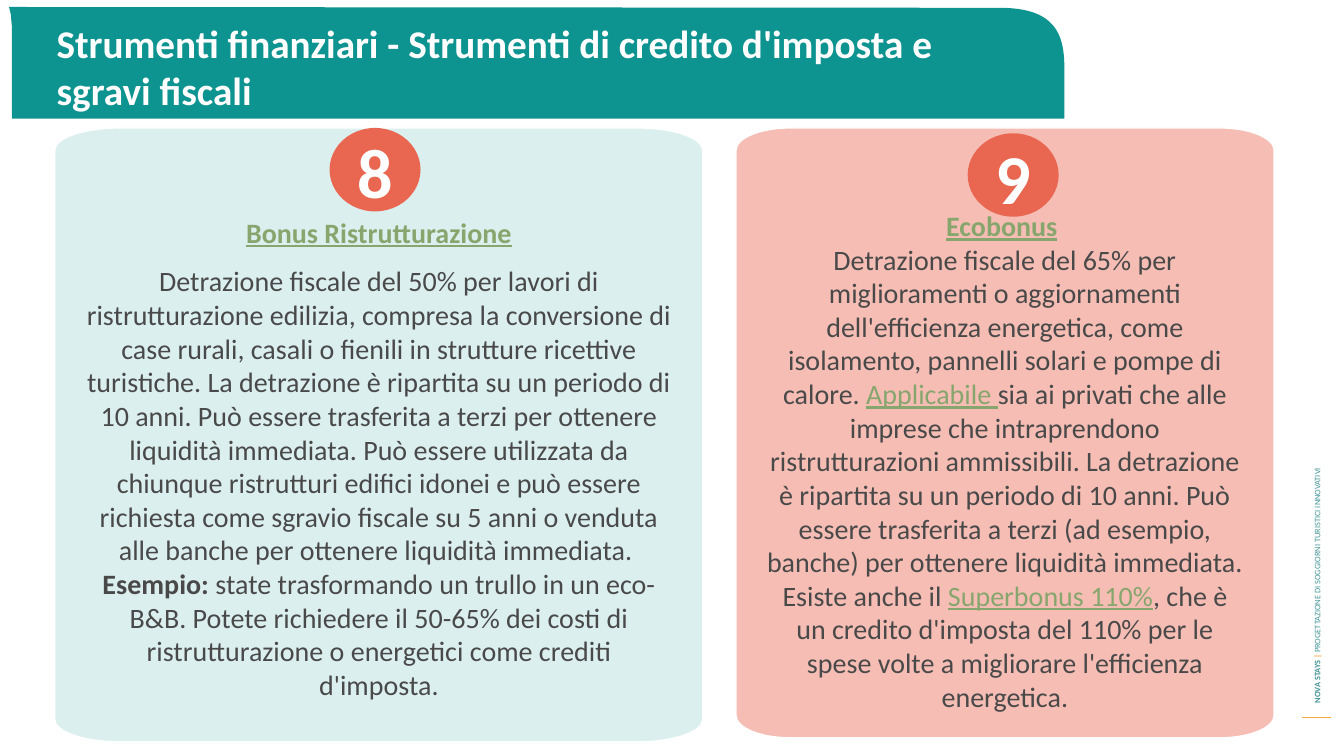
from dataclasses import dataclass

from lxml import etree
from pptx import Presentation
from pptx.dml.color import RGBColor
from pptx.enum.shapes import MSO_CONNECTOR, MSO_SHAPE
from pptx.enum.text import MSO_ANCHOR, PP_ALIGN
from pptx.oxml.ns import qn
from pptx.util import Pt

OVAL = MSO_SHAPE.OVAL
STRAIGHT = MSO_CONNECTOR.STRAIGHT
TOP, MIDDLE = MSO_ANCHOR.TOP, MSO_ANCHOR.MIDDLE
LEFT, CENTER = PP_ALIGN.LEFT, PP_ALIGN.CENTER


@dataclass(frozen=True)
class Theme:
    font: str = "Calibri"
    teal: str = "0D9390"
    mint: str = "DCEFEF"
    pink: str = "F6BDB4"
    coral: str = "E96751"
    green: str = "87A66E"
    grey: str = "494949"
    white: str = "FFFFFF"
    amber: str = "FBA63D"
    gold: str = "FBA63B"
    sea: str = "459597"
    tiny: int = 6
    body: int = 20
    title: int = 28
    digit: int = 50


def rgb(code):
    return RGBColor.from_string(code)


def bend(shape, steps):
    """Turn each three segments that stand for a curve into one cubic curve."""
    lines = iter(list(shape._element.iter(qn("a:lnTo"))))
    for step in steps:
        first = next(lines)
        if len(step) == 6:
            curve = etree.Element(qn("a:cubicBezTo"))
            first.addprevious(curve)
            for line in (first, next(lines), next(lines)):
                curve.append(line[0])
                line.getparent().remove(line)


def run(text, **style):
    """A piece of text with its format: color, bold, line (underline)."""
    return text, style


class Painter:
    def __init__(self, slide, theme):
        self.shapes = slide.shapes
        self.theme = theme

    def paint(self, shape, fill, edge=None):
        shape.shadow.inherit = False
        shape.fill.solid()
        shape.fill.fore_color.rgb = rgb(fill)
        if edge:
            shape.line.color.rgb = rgb(edge)
            shape.line.width = Pt(1)
        else:
            shape.line.fill.background()

    def outline(self, start, steps, fill, edge=None):
        """Closed shape; a step is a point (x, y) or a curve of six numbers."""
        points = [(Pt(step[i]), Pt(step[i + 1]))
                  for step in steps for i in range(0, len(step), 2)]
        builder = self.shapes.build_freeform(Pt(start[0]), Pt(start[1]))
        builder.add_line_segments(points, close=True)
        shape = builder.convert_to_shape()
        bend(shape, steps)
        self.paint(shape, fill, edge)

    def card(self, left, top, width, height, fill):
        """Panel with flat elliptical corners."""
        rx, ry = width * 0.1, 16
        kx, ky = rx * 0.45, ry * 0.45
        right, base = left + width, top + height
        steps = [
            (left, top + ky, left + kx, top, left + rx, top),
            (right - rx, top),
            (right - kx, top, right, top + ky, right, top + ry),
            (right, base - ry),
            (right, base - ky, right - kx, base, right - rx, base),
            (left + rx, base),
            (left + kx, base, left, base - ky, left, base - ry),
        ]
        self.outline((left, top + ry), steps, fill, self.theme.white)

    def rule(self, x1, y1, x2, y2, color):
        line = self.shapes.add_connector(STRAIGHT, Pt(x1), Pt(y1), Pt(x2), Pt(y2))
        line.line.color.rgb = rgb(color)
        line.line.width = Pt(0.75)
        etree.SubElement(line._element.spPr, qn("a:effectLst"))

    def text(self, box, paras, size, color, align=LEFT, anchor=TOP, bold=False, gap=0, turn=0):
        """Text box; paras is a list of run lists, gap the space after the first."""
        shape = self.shapes.add_textbox(*map(Pt, box))
        shape.rotation = turn
        frame = shape.text_frame
        frame.word_wrap = True
        frame.vertical_anchor = anchor
        for index, runs in enumerate(paras):
            para = frame.paragraphs[0] if index == 0 else frame.add_paragraph()
            para.alignment = align
            para.space_before = Pt(gap if index == 1 else 0)
            for words, style in runs:
                piece = para.add_run()
                piece.text = words
                font = piece.font
                font.name = self.theme.font
                font.size = Pt(size)
                font.bold = style.get("bold", bold)
                font.underline = style.get("line", False)
                font.color.rgb = rgb(style.get("color", color))

    def badge(self, left, top, digit):
        theme = self.theme
        disc = self.shapes.add_shape(OVAL, Pt(left), Pt(top), Pt(65), Pt(59.6))
        self.paint(disc, theme.coral)
        self.text((left + 1.3, top - 2.9, 62, 67.7), [[run(digit)]], theme.digit,
                  theme.white, align=CENTER, bold=True)


def main():
    deck = Presentation()
    deck.slide_width, deck.slide_height = Pt(960), Pt(540)
    theme = Theme()
    pen = Painter(deck.slides.add_slide(deck.slide_layouts[6]), theme)
    link = {"color": theme.green, "line": True}

    pen.rule(930.2, 512.6, 951.1, 512.6, theme.amber)
    pen.text((733, 294.5, 415.4, 14.4), [[
        run("NOVA STAYS ", bold=True),
        run("| ", bold=True, color=theme.gold),
        run("PROGETTAZIONE DI SOGGIORNI TURISTICI INNOVATIVI"),
    ]], theme.tiny, theme.sea, anchor=MIDDLE, turn=270)

    pen.outline((6.5, 5), [
        (714.2, 5.6),
        (753.8, 5.6, 760.3, 24.5, 760.3, 48.2),
        (760.3, 84.8), (8.6, 84.8), (8.6, 20.9),
        (8.6, 17.3, 7.9, 14.4, 7.9, 10.8),
    ], theme.teal)
    pen.card(39.1, 91.4, 462.9, 438.5, theme.mint)
    pen.card(525.7, 91.4, 384.4, 435.6, theme.pink)

    pen.text((54, 150.2, 433.4, 357), [
        [run("Bonus Ristrutturazione", bold=True, **link)],
        [run("Detrazione fiscale del 50% per lavori di ristrutturazione edilizia, "
             "compresa la conversione di case rurali, casali o fienili in strutture "
             "ricettive turistiche. La detrazione è ripartita su un periodo di 10 anni. "
             "Può essere trasferita a terzi per ottenere liquidità immediata. Può essere "
             "utilizzata da chiunque ristrutturi edifici idonei e può essere richiesta "
             "come sgravio fiscale su 5 anni o venduta alle banche per ottenere "
             "liquidità immediata. ")],
        [run("Esempio: ", bold=True),
         run("state trasformando un trullo in un eco-B&B. Potete richiedere il 50-65% "
             "dei costi di ristrutturazione o energetici come crediti d'imposta.")],
    ], theme.body, theme.grey, align=CENTER, gap=10.8)

    pen.text((539.6, 145.4, 356.4, 370.8), [
        [run("Ecobonus", bold=True, **link), run(" ", bold=True)],
        [run("Detrazione fiscale del 65% per miglioramenti o aggiornamenti "
             "dell'efficienza energetica, come isolamento, pannelli solari e pompe di "
             "calore. "),
         run("Applicabile ", **link),
         run("sia ai privati che alle imprese che intraprendono ristrutturazioni "
             "ammissibili. La detrazione è ripartita su un periodo di 10 anni. Può "
             "essere trasferita a terzi (ad esempio, banche) per ottenere liquidità "
             "immediata. Esiste anche il "),
         run("Superbonus 110%", **link),
         run(", che è un credito d'imposta del 110% per le spese volte a migliorare "
             "l'efficienza energetica.")],
    ], theme.body, theme.grey, align=CENTER)

    pen.text((33.4, 9.4, 672.5, 75.6), [[
        run("Strumenti finanziari - Strumenti di credito d'imposta e sgravi fiscali"),
    ]], theme.title, theme.white, anchor=MIDDLE, bold=True)

    pen.badge(235.4, 91.4, "8")
    pen.badge(691.2, 95.2, "9")
    deck.save("out.pptx")


if __name__ == "__main__":
    main()
